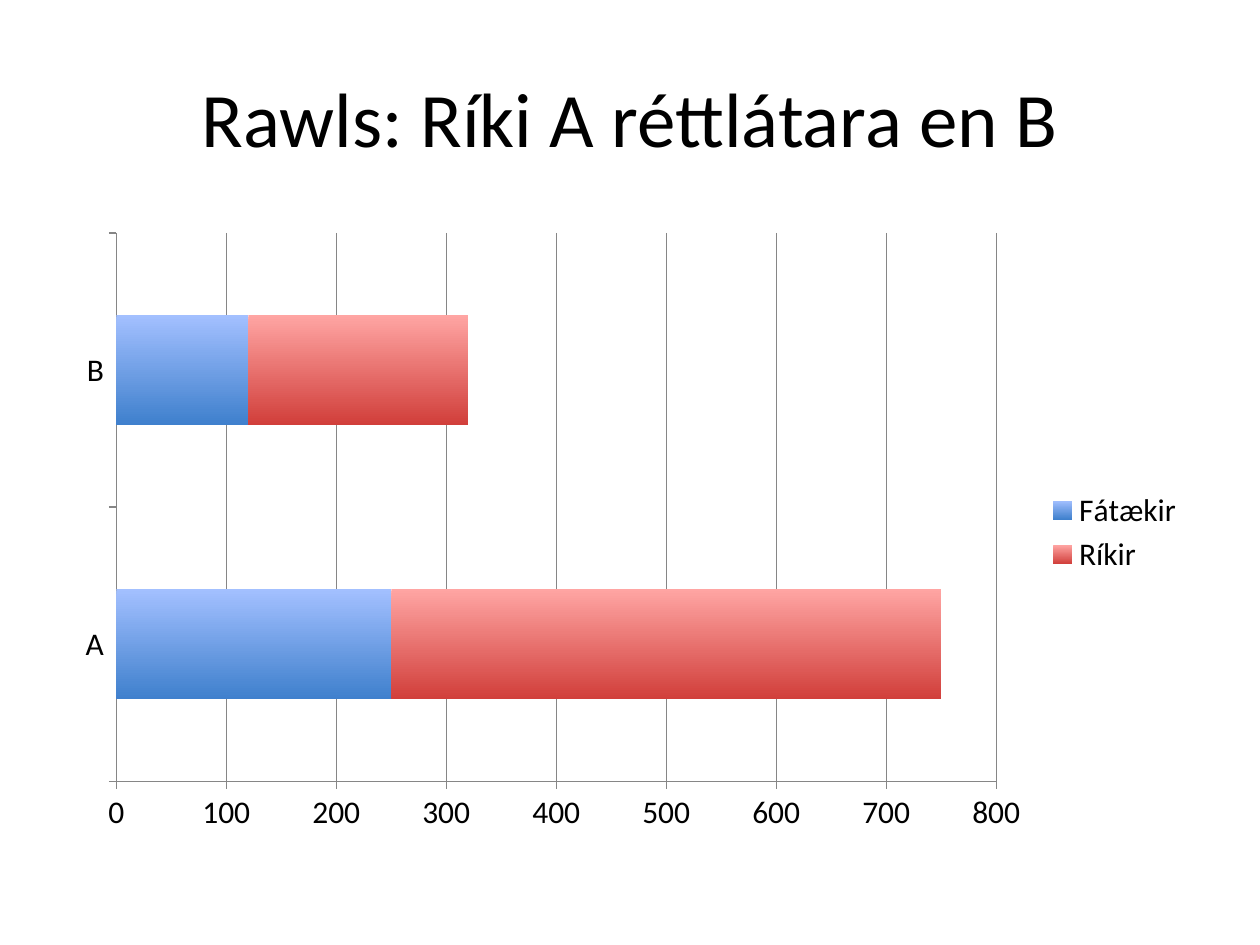
from pptx import Presentation
from pptx.chart.data import CategoryChartData
from pptx.dml.color import RGBColor
from pptx.enum.chart import XL_CHART_TYPE, XL_LEGEND_POSITION, XL_TICK_MARK
from pptx.enum.text import MSO_ANCHOR, PP_ALIGN
from pptx.util import Inches, Pt

BAR_STACKED = XL_CHART_TYPE.BAR_STACKED
LEGEND_RIGHT = XL_LEGEND_POSITION.RIGHT
TICK_OUTSIDE, TICK_NONE = XL_TICK_MARK.OUTSIDE, XL_TICK_MARK.NONE
MIDDLE, CENTER = MSO_ANCHOR.MIDDLE, PP_ALIGN.CENTER

HEADING = "Rawls: Ríki A réttlátara en B"
STATES = ["A", "B"]
INCOMES = {"Fátækir": (250, 120), "Ríkir": (500, 200)}

THEME = {
    "font": "Calibri",
    "title_size": 44,
    "chart_size": 18,
    "text": "000000",
    "axis": "868686",
    "gradients": [("A3C0FF", "3F80CD"), ("FFA5A3", "D13F3B")],
}
TITLE_BOX = (0.5, 0.3, 9, 1.25)
CHART_BOX = (0.5, 1.75, 9, 4.95)
TITLE_ONLY = 5


def color(key):
    return RGBColor.from_string(THEME.get(key, key))


def style_font(font, size):
    font.name = THEME["font"]
    font.size = Pt(THEME[size])
    font.color.rgb = color("text")


def style_line(line):
    line.color.rgb = color("axis")
    line.width = Pt(0.75)


def add_heading(slide):
    heading = slide.shapes.title
    heading.left, heading.top, heading.width, heading.height = map(Inches, TITLE_BOX)
    frame = heading.text_frame
    frame.text = HEADING
    frame.vertical_anchor = MIDDLE
    frame.paragraphs[0].alignment = CENTER
    style_font(frame.paragraphs[0].runs[0].font, "title_size")


def add_income_chart(slide):
    income_data = CategoryChartData()
    income_data.categories = STATES
    for group, amounts in INCOMES.items():
        income_data.add_series(group, amounts)
    chart = slide.shapes.add_chart(
        BAR_STACKED, *map(Inches, CHART_BOX), income_data).chart
    style_font(chart.font, "chart_size")
    chart.has_title = False
    chart.has_legend = True
    chart.legend.position = LEGEND_RIGHT
    chart.legend.include_in_layout = False

    bars = chart.plots[0]
    bars.gap_width, bars.overlap, bars.vary_by_categories = 150, 100, False
    for series, stops in zip(bars.series, THEME["gradients"]):
        fill = series.format.fill
        fill.gradient()
        fill.gradient_angle = 270
        for stop, shade in zip(fill.gradient_stops, stops):
            stop.color.rgb = color(shade)

    for axis in (chart.category_axis, chart.value_axis):
        axis.major_tick_mark, axis.minor_tick_mark = TICK_OUTSIDE, TICK_NONE
        style_line(axis.format.line)
    chart.category_axis.has_major_gridlines = False
    amounts_axis = chart.value_axis
    amounts_axis.minimum_scale, amounts_axis.maximum_scale = 0, 800
    amounts_axis.major_unit = 100
    amounts_axis.has_major_gridlines = True
    style_line(amounts_axis.major_gridlines.format.line)


def main():
    deck = Presentation()
    deck.slide_width, deck.slide_height = Inches(10), Inches(7.5)
    slide = deck.slides.add_slide(deck.slide_layouts[TITLE_ONLY])
    add_heading(slide)
    add_income_chart(slide)
    deck.save("out.pptx")


if __name__ == "__main__":
    main()
